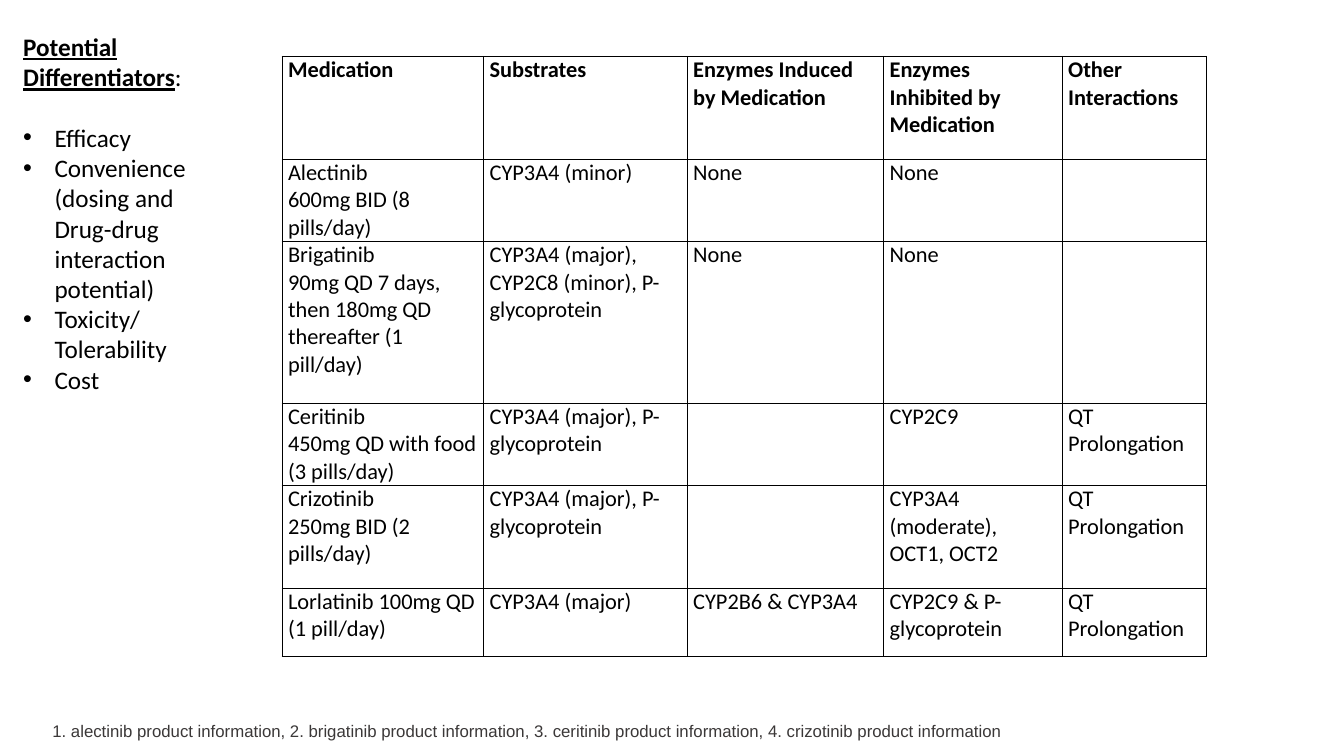
from dataclasses import dataclass

from lxml import etree
from pptx import Presentation
from pptx.dml.color import RGBColor
from pptx.enum.text import MSO_ANCHOR, MSO_AUTO_SIZE, PP_ALIGN
from pptx.oxml.ns import qn
from pptx.util import Cm, Pt

TOP = MSO_ANCHOR.TOP
FIXED = MSO_AUTO_SIZE.NONE
LEFT = PP_ALIGN.LEFT
BLACK = "000000"
GREY = "3B3838"
SIDES = ("a:lnL", "a:lnR", "a:lnT", "a:lnB")


@dataclass
class Box:
    left: float
    top: float
    width: float
    height: float


@dataclass
class Drug:
    name: str
    substrates: str
    induced: str
    inhibited: str
    other: str
    height: float

    def cells(self) -> tuple[str, ...]:
        return self.name, self.substrates, self.induced, self.inhibited, self.other


TITLE = Box(0.33, 0.66, 4.95, 1.9)
LIST = Box(0.33, 2.95, 4.95, 7.2)
TABLE = Box(7.11, 1.42, 23.3, 15.03)
NOTE = Box(1.07, 18.03, 32.41, 0.76)
WIDTHS = (5.08, 5.13, 4.95, 4.5, 3.63)
POINTS = (
    "Efficacy",
    "Convenience (dosing and Drug-drug interaction potential)",
    "Toxicity/ Tolerability",
    "Cost",
)
ROWS = (
    Drug("Medication", "Substrates", "Enzymes Induced by Medication",
         "Enzymes Inhibited by Medication", "Other Interactions", 2.59),
    Drug("Alectinib\n600mg BID (8 pills/day)", "CYP3A4 (minor)",
         "None", "None", "", 2.06),
    Drug("Brigatinib\n90mg QD 7 days, then 180mg QD thereafter (1 pill/day)",
         "CYP3A4 (major), CYP2C8 (minor), P-glycoprotein",
         "None", "None", "", 4.08),
    Drug("Ceritinib\n450mg QD with food (3 pills/day)",
         "CYP3A4 (major), P-glycoprotein", "", "CYP2C9", "QT Prolongation", 2.06),
    Drug("Crizotinib\n250mg BID (2 pills/day)",
         "CYP3A4 (major), P-glycoprotein", "",
         "CYP3A4 (moderate), OCT1, OCT2", "QT Prolongation", 2.59),
    Drug("Lorlatinib 100mg QD (1 pill/day)", "CYP3A4 (major)",
         "CYP2B6 & CYP3A4", "CYP2C9 & P-glycoprotein", "QT Prolongation", 1.73),
)


def color(code: str) -> RGBColor:
    return RGBColor.from_string(code)


def write(par, text: str, *, size: float = 18, font: str = "Calibri",
          ink: str = BLACK, bold: bool = False, line: bool = False) -> None:
    par.alignment = LEFT
    par.space_before = Pt(0)
    run = par.add_run()
    run.text = text
    run.font.size = Pt(size)
    run.font.name = font
    run.font.bold = bold
    run.font.underline = line
    run.font.color.rgb = color(ink)


def next_par(frame, index: int):
    return frame.add_paragraph() if index else frame.paragraphs[0]


def place(shape, box: Box):
    shape.left, shape.top = Cm(box.left), Cm(box.top)
    shape.width, shape.height = Cm(box.width), Cm(box.height)
    frame = shape.text_frame
    frame.word_wrap = True
    frame.auto_size = FIXED
    frame.vertical_anchor = TOP
    return frame


def bullet(par) -> None:
    props = par._p.get_or_add_pPr()
    props.set("marL", str(Cm(0.79)))
    props.set("indent", str(-Cm(0.79)))
    etree.SubElement(props, qn("a:buFont")).set("typeface", "Arial")
    etree.SubElement(props, qn("a:buChar")).set("char", "•")


def border(cell, code: str, width: float) -> None:
    props = cell._tc.get_or_add_tcPr()
    for index, side in enumerate(SIDES):
        edge = etree.Element(qn(side), w=str(Pt(width)))
        fill = etree.SubElement(edge, qn("a:solidFill"))
        etree.SubElement(fill, qn("a:srgbClr")).set("val", code)
        props.insert(index, edge)


def fill_cell(cell, text: str, bold: bool) -> None:
    cell.margin_left = cell.margin_right = Cm(0.15)
    cell.margin_top = cell.margin_bottom = 0
    cell.vertical_anchor = TOP
    cell.fill.background()
    border(cell, BLACK, 1)
    for index, part in enumerate(text.split("\n")):
        write(next_par(cell.text_frame, index), part, size=16, bold=bold)


def add_grid(slide, box: Box) -> None:
    table = slide.shapes.add_table(
        len(ROWS), len(WIDTHS), Cm(box.left), Cm(box.top),
        Cm(box.width), Cm(box.height)).table
    table.first_row = False
    table.horz_banding = False
    for col, width in zip(table.columns, WIDTHS):
        col.width = Cm(width)
    for index, drug in enumerate(ROWS):
        row = table.rows[index]
        row.height = Cm(drug.height)
        for cell, text in zip(row.cells, drug.cells()):
            fill_cell(cell, text, index == 0)


def main() -> None:
    deck = Presentation()
    deck.slide_width, deck.slide_height = Cm(33.87), Cm(19.05)
    slide = deck.slides.add_slide(deck.slide_layouts[1])

    add_grid(slide, TABLE)

    head = place(slide.shapes.title, TITLE).paragraphs[0]
    write(head, "Potential Differentiators", bold=True, line=True)
    write(head, ":")

    body = place(slide.placeholders[1], LIST)
    for index, point in enumerate(POINTS):
        par = next_par(body, index)
        write(par, point)
        bullet(par)

    note = place(slide.shapes.add_textbox(0, 0, 0, 0), NOTE)
    write(note.paragraphs[0],
          "1. alectinib product information, 2. brigatinib product information, "
          "3. ceritinib product information, 4. crizotinib product information",
          size=12, font="Arial", ink=GREY)

    deck.save("out.pptx")


if __name__ == "__main__":
    main()
